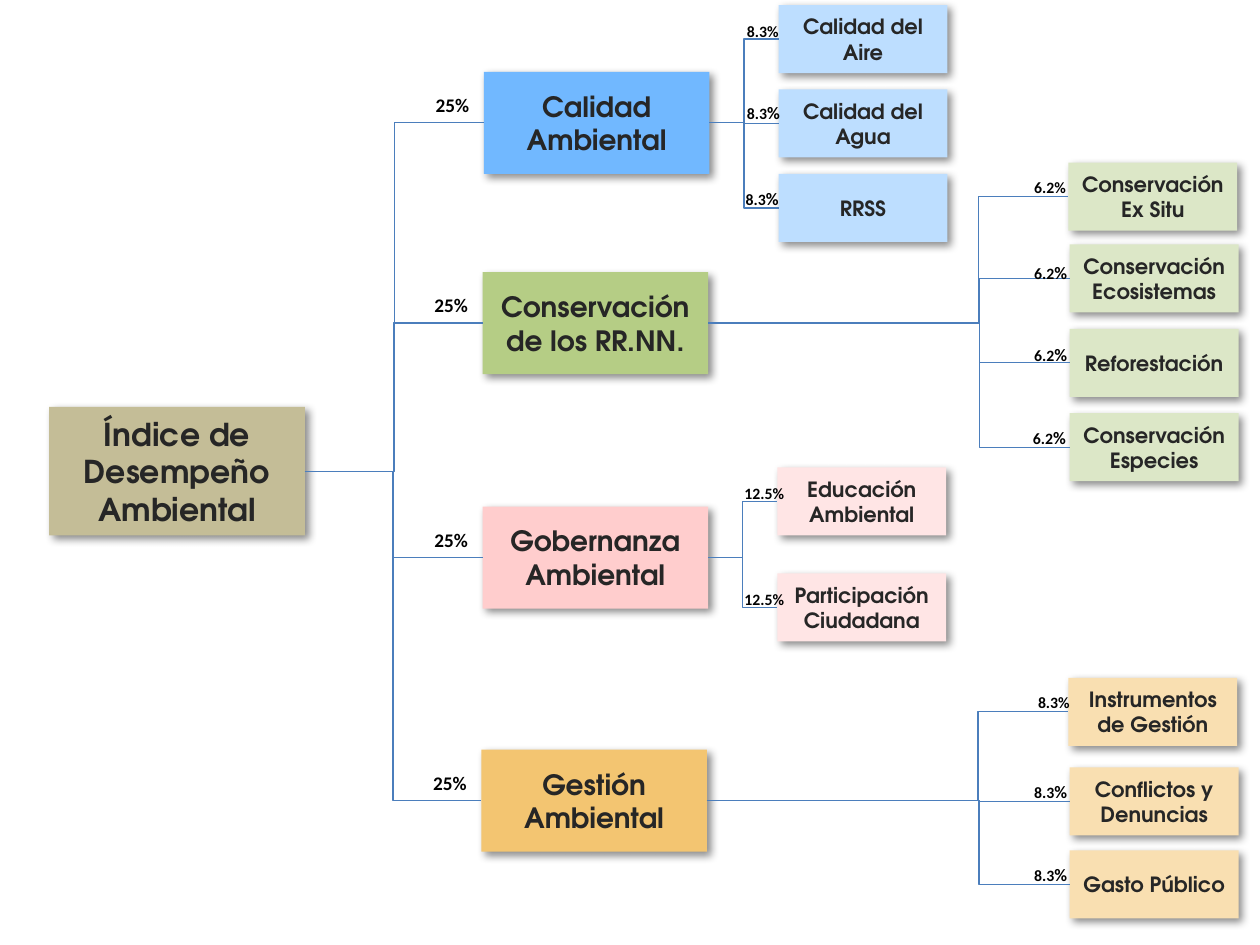
from lxml import etree
from pptx import Presentation
from pptx.dml.color import RGBColor
from pptx.enum.shapes import MSO_CONNECTOR, MSO_SHAPE
from pptx.enum.text import MSO_ANCHOR, MSO_AUTO_SIZE, PP_ALIGN
from pptx.oxml import parse_xml
from pptx.oxml.ns import qn
from pptx.util import Inches, Pt

ELBOW, RECT = MSO_CONNECTOR.ELBOW, MSO_SHAPE.RECTANGLE
MIDDLE, CENTER = MSO_ANCHOR.MIDDLE, PP_ALIGN.CENTER
RIGHT_SITE, LEFT_SITE = 3, 1
BOX_FONT, LABEL_FONT = "TeX Gyre Adventor", "Calibri"
COLORS = {
    "root": "C4BD97", "text": "262626", "label": "000000", "line": "4B7EBC",
    "blue": "71B8FF", "blue_leaf": "BDDEFF",
    "green": "B5CD85", "green_leaf": "DCE7C7",
    "pink": "FFCDCD", "pink_leaf": "FFE5E5",
    "orange": "F3C571", "orange_leaf": "F9DFB1",
}
SHADOW = (
    '<a:effectLst xmlns:a="http://schemas.openxmlformats.org/drawingml/2006/main">'
    '<a:outerShdw blurRad="63500" dist="38100" dir="2700000" algn="tl" rotWithShape="0">'
    '<a:srgbClr val="000000"><a:alpha val="45000"/></a:srgbClr>'
    '</a:outerShdw></a:effectLst>'
)
ROOT_SIZE, BRANCH_SIZE, LEAF_SIZE = (2.03, 1.02), (1.79, 0.81), (1.34, 0.54)

# Branch: name, color, left, top, connector bend, weight of each leaf, leaves
# Leaf: name, left, top, label left, label top, size of the percent sign
BRANCHES = [
    ("Calidad Ambiental", "blue", 3.84, 0.57, 0.5, "8.3", [
        ("Calidad del Aire", 6.18, 0.04, 5.83, 0.12, 9),
        ("Calidad del Agua", 6.18, 0.71, 5.83, 0.76, 10),
        ("RRSS", 6.18, 1.38, 5.82, 1.44, 10)]),
    ("Conservación de los RR.NN.", "green", 3.83, 2.16, 0.75, "6.2", [
        ("Conservación Ex Situ", 8.48, 1.29, 8.11, 1.36, 9),
        ("Conservación Ecosistemas", 8.49, 1.94, 8.11, 2.03, 10),
        ("Reforestación", 8.49, 2.61, 8.11, 2.68, 10),
        ("Conservación Especies", 8.49, 3.28, 8.1, 3.34, 10)]),
    ("Gobernanza Ambiental", "pink", 3.83, 4.02, 0.5, "12.5", [
        ("Educación Ambiental", 6.17, 3.71, 5.81, 3.79, 9),
        ("Participación Ciudadana", 6.17, 4.55, 5.81, 4.63, 9)]),
    ("Gestión Ambiental", "orange", 3.82, 5.95, 0.75, "8.3", [
        ("Instrumentos de Gestión", 8.48, 5.38, 8.14, 5.45, 9),
        ("Conflictos y Denuncias", 8.49, 6.09, 8.11, 6.15, 10),
        ("Gasto Público", 8.49, 6.75, 8.11, 6.81, 10)]),
]

prs = Presentation()
prs.slide_width, prs.slide_height = Inches(10), Inches(7.5)
s = prs.slides.add_slide(prs.slide_layouts[6])


def add_text(text, left, top, width, height, size, fill=None, sign_size=None):
    """Add a filled, shadowed box, or a plain label when there is no fill."""
    place = [Inches(v) for v in (left, top, width, height)]
    if fill:
        sp = s.shapes.add_shape(RECT, *place)
        sp.fill.solid()
        sp.fill.fore_color.rgb = RGBColor.from_string(COLORS[fill])
        sp.line.fill.background()
        sp._element.spPr.append(parse_xml(SHADOW))
    else:
        sp = s.shapes.add_textbox(*place)
    tf = sp.text_frame
    p = tf.paragraphs[0]
    if fill:
        tf.word_wrap = True
        tf.vertical_anchor = MIDDLE
        p.alignment = CENTER
    else:
        tf.word_wrap = False
        tf.auto_size = MSO_AUTO_SIZE.SHAPE_TO_FIT_TEXT
    runs = [(text, size)]
    if sign_size:
        runs.append(("%", sign_size))
    for words, points in runs:
        r = p.add_run()
        r.text = words
        r.font.size = Pt(points)
        r.font.bold = True
        r.font.name = BOX_FONT if fill else LABEL_FONT
        r.font.color.rgb = RGBColor.from_string(COLORS["text" if fill else "label"])
    return sp


def connect(parent, child, bend=0.5):
    """Join parent to child with an elbow that turns at the given share of its width."""
    line = s.shapes.add_connector(ELBOW, 0, 0, 0, 0)
    line.begin_connect(parent, RIGHT_SITE)
    line.end_connect(child, LEFT_SITE)
    line.line.color.rgb = RGBColor.from_string(COLORS["line"])
    line.line.width = Pt(0.75)
    spPr = line._element.spPr
    guides = spPr.find(qn("a:prstGeom")).find(qn("a:avLst"))
    etree.SubElement(guides, qn("a:gd"), name="adj1", fmla=f"val {round(bend * 100000)}")
    etree.SubElement(spPr, qn("a:effectLst"))


root = add_text("Índice de Desempeño Ambiental", 0.39, 3.23, *ROOT_SIZE, 18, fill="root")

for name, color, left, top, bend, weight, leaves in BRANCHES:
    branch = add_text(name, left, top, *BRANCH_SIZE, 16, fill=color)
    connect(root, branch)
    add_text("25%", left - 0.48, top + 0.12, 0.47, 0.29, 11)
    for leaf_name, x, y, label_x, label_y, sign_size in leaves:
        leaf = add_text(leaf_name, x, y, *LEAF_SIZE, 12, fill=color + "_leaf")
        connect(branch, leaf, bend)
        label_width = 0.52 if weight == "12.5" else 0.46
        add_text(weight, label_x, label_y, label_width, 0.26, 9, sign_size=sign_size)

prs.save("out.pptx")
